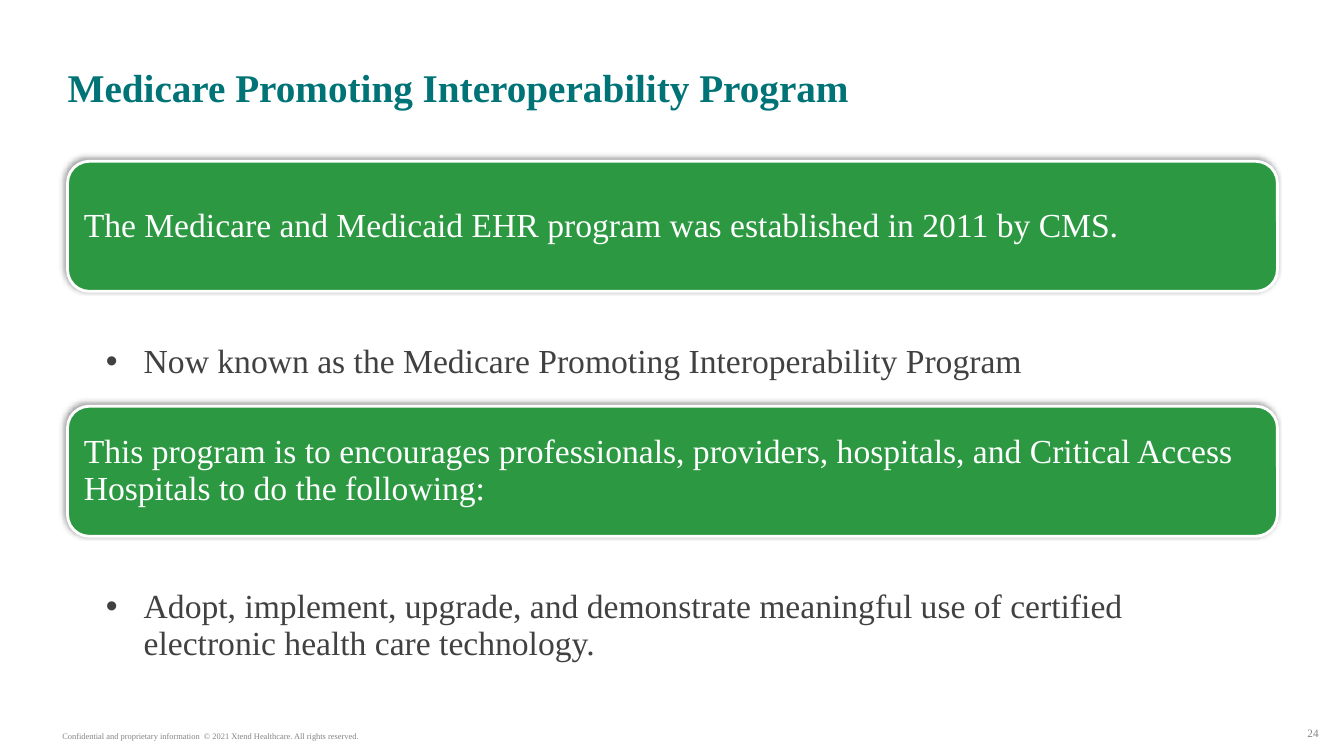
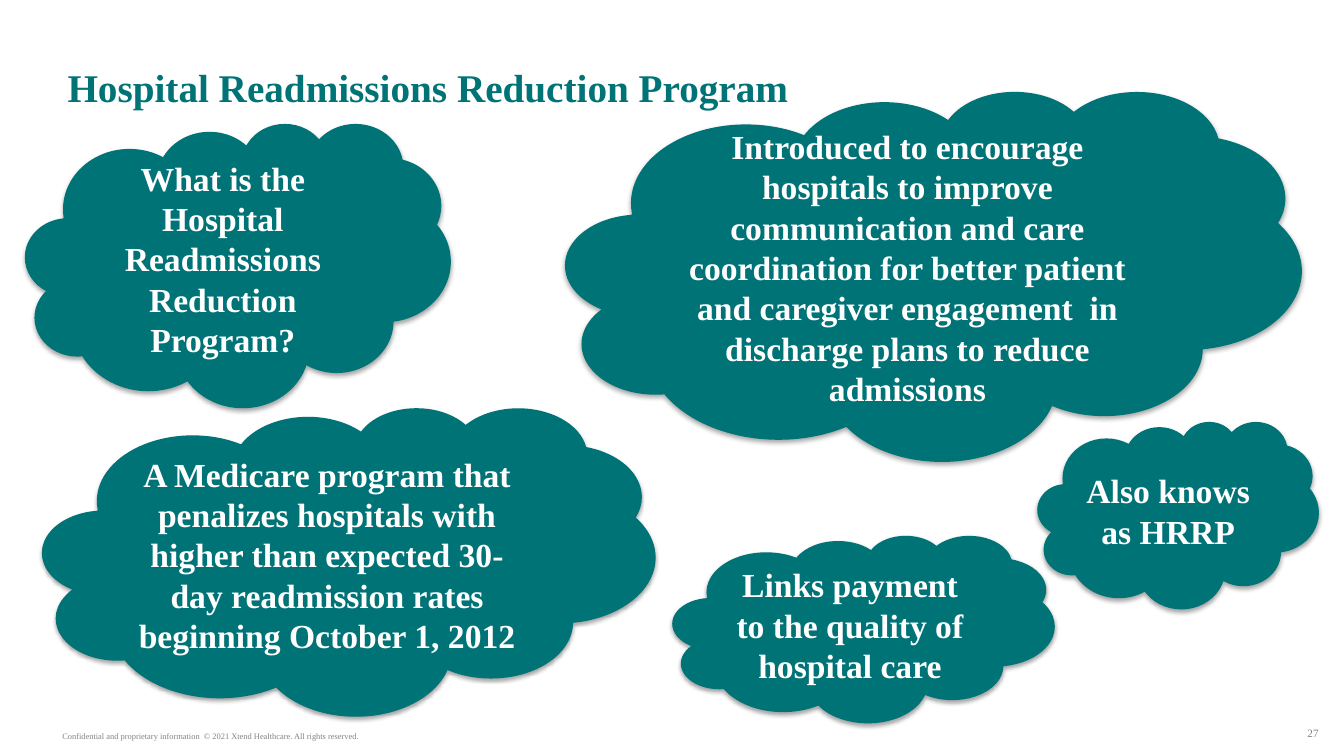
from lxml import etree
from pptx import Presentation
from pptx.dml.color import RGBColor
from pptx.enum import shapes, text
from pptx.oxml.ns import qn
from pptx.util import Inches, Pt

COLORS = {"teal": "007377", "green": "2C9942", "white": "FFFFFF",
          "body": "414141", "footer": "838383", "shadow": "000000"}
FONT = "Times New Roman"
FOOTER = ("Confidential and proprietary information  "
          "© 2021 Xtend Healthcare. All rights reserved.")
TITLE_ONLY, TWO_CONTENT = 5, 3
LEFT, WIDTH = 0.67, 12
ALIGN, ANCHOR = text.PP_ALIGN, text.MSO_ANCHOR


def rgb(name):
    return RGBColor.from_string(COLORS[name])


class Deck:
    """Holds the presentation, its style and the current slide."""

    def __init__(self):
        self.prs = Presentation()
        self.prs.slide_width, self.prs.slide_height = Inches(13.33), Inches(7.5)
        self.s = None

    def slide(self, layout, title, number):
        self.s = self.prs.slides.add_slide(self.prs.slide_layouts[layout])
        self.place(self.s.shapes.title, LEFT, 0.53, WIDTH, 0.66)
        self.set_text(self.s.shapes.title, title, 28, "teal", bold=True,
                      anchor=ANCHOR.MIDDLE, insets=(0, 0.05, 0, 0.05))
        self.label(FOOTER, 6, 0.52, 7.2, 3.3, 0.2)
        self.label(number, 8, 12.32, 7.16, 0.76, 0.27, align=ALIGN.RIGHT,
                   insets=(0, 0.05, 0, 0.05))

    def place(self, sp, x, y, w, h):
        sp.left, sp.top, sp.width, sp.height = map(Inches, (x, y, w, h))

    def set_text(self, sp, words, size, color, bold=False, align=ALIGN.LEFT,
                 anchor=ANCHOR.TOP, insets=(0.1, 0.05, 0.1, 0.05), spacing=1.0):
        tf = sp.text_frame
        tf.text = words
        tf.word_wrap = True
        tf.auto_size = text.MSO_AUTO_SIZE.NONE
        tf.vertical_anchor = anchor
        (tf.margin_left, tf.margin_top,
         tf.margin_right, tf.margin_bottom) = map(Inches, insets)
        p = tf.paragraphs[0]
        p.alignment, p.line_spacing, p.space_before = align, spacing, Pt(0)
        font = p.runs[0].font
        font.name, font.size, font.bold = FONT, Pt(size), bold
        font.color.rgb = rgb(color)

    def label(self, words, size, x, y, w, h, **style):
        sp = self.s.shapes.add_textbox(*map(Inches, (x, y, w, h)))
        self.set_text(sp, words, size, "footer", **style)

    def shape(self, kind, fill, x, y, w, h):
        sp = self.s.shapes.add_shape(kind, *map(Inches, (x, y, w, h)))
        sp.shadow.inherit = False
        sp.fill.solid()
        sp.fill.fore_color.rgb = rgb(fill)
        sp.line.fill.background()
        return sp

    def cast_shadow(self, sp, opacity, blur, distance, angle):
        effects = sp._element.spPr.find(qn("a:effectLst"))
        shadow = etree.SubElement(
            effects, qn("a:outerShdw"), blurRad=str(Pt(blur)),
            dist=str(Pt(distance)), dir=str(angle * 60000), rotWithShape="0")
        color = etree.SubElement(shadow, qn("a:srgbClr"), val=COLORS["shadow"])
        etree.SubElement(color, qn("a:alpha"), val=str(opacity * 1000))

    def panel(self, words, y, h):
        sp = self.shape(shapes.MSO_SHAPE.ROUNDED_RECTANGLE, "green",
                        LEFT, y, WIDTH, h)
        sp.line.color.rgb = rgb("white")
        sp.line.width = Pt(2)
        self.cast_shadow(sp, 40, 4, 3, 225)
        self.set_text(sp, words, 24, "white", anchor=ANCHOR.MIDDLE,
                      insets=(0.1,) * 4, spacing=0.9)

    def bullet(self, idx, words, y, h):
        """Fill body placeholder idx with one bulleted paragraph."""
        sp = self.s.placeholders[idx]
        self.place(sp, LEFT, y, WIDTH, h)
        pPr = sp.text_frame.paragraphs[0]._p.get_or_add_pPr()
        pPr.set("marL", str(Inches(0.25)))
        pPr.set("indent", str(-Inches(0.25)))
        etree.SubElement(pPr, qn("a:buChar"), char="•")
        self.set_text(sp, words, 24, "body", insets=(0.38, 0.03, 0.19, 0.03),
                      spacing=0.9)

    def cloud(self, words, x, y, w, h):
        sp = self.shape(shapes.MSO_SHAPE.CLOUD, "teal", x, y, w, h)
        self.cast_shadow(sp, 35, 3.1, 1.8, 90)
        self.set_text(sp, words, 24, "white", bold=True, align=ALIGN.CENTER,
                      anchor=ANCHOR.MIDDLE)


def interoperability(deck):
    deck.slide(TWO_CONTENT, "Medicare Promoting Interoperability Program", "24")
    sections = [
        ("The Medicare and Medicaid EHR program was established in 2011 by CMS.",
         "Now known as the Medicare Promoting Interoperability Program", 0.64),
        ("This program is to encourages professionals, providers, hospitals, "
         "and Critical Access Hospitals to do the following:",
         "Adopt, implement, upgrade, and demonstrate meaningful use of "
         "certified electronic health care technology.", 0.8),
    ]
    top, pitch, panel_height, gap = 1.6, 2.43, 1.29, 0.5
    for i, (heading, detail, height) in enumerate(sections):
        y = top + i * pitch
        deck.panel(heading, y, panel_height)
        deck.bullet(i + 1, detail, y + panel_height + gap, height)


def readmissions(deck):
    deck.slide(TITLE_ONLY, "Hospital Readmissions Reduction Program", "27")
    clouds = [
        ("What is the Hospital Readmissions Reduction Program?",
         0.25, 1.22, 4.22, 2.82),
        ("Also knows as HRRP", 10.29, 4.18, 2.79, 1.86),
        ("A Medicare program that penalizes hospitals with higher than expected "
         "30-day readmission rates beginning October 1, 2012",
         0.42, 4.04, 6.08, 3.06),
        ("Introduced to encourage hospitals to improve communication and care "
         "coordination for better patient and caregiver engagement  in "
         "discharge plans to reduce admissions", 5.61, 0.9, 7.3, 3.67),
        ("Links payment to the quality of hospital care",
         6.67, 5.31, 3.79, 1.86),
    ]
    for cloud in clouds:
        deck.cloud(*cloud)


def main():
    deck = Deck()
    interoperability(deck)
    readmissions(deck)
    deck.prs.save("out.pptx")


if __name__ == "__main__":
    main()
